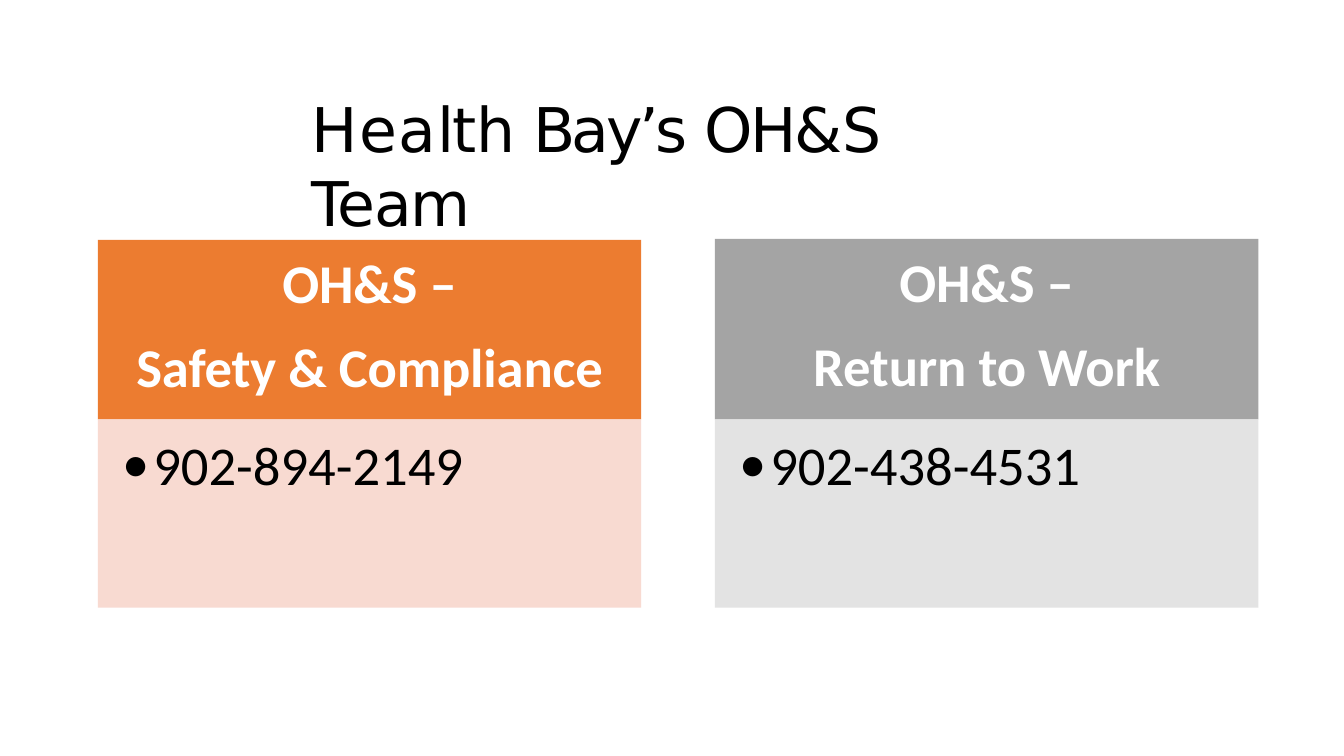
from pptx import Presentation
from pptx.dml.color import RGBColor
from pptx.enum.shapes import MSO_SHAPE as Shape
from pptx.enum.text import MSO_ANCHOR as Anchor, MSO_AUTO_SIZE as AutoSize, PP_ALIGN as Align
from pptx.oxml.ns import qn
from pptx.util import Inches, Pt
from lxml.etree import SubElement

TITLE_SPANS = [("Hea", 1), ("lt", -1.8), ("h ", -1.6), ("Bay’s ", -2.4),
               ("OH&", -1.6), ("S ", -1.4), ("Team", -0.9)]
TEAMS = [
    ("Safety & Compliance", "902-894-2149", "EC7C30", "F8D6CD", 2.38),
    ("Return to Work", "902-438-4531", "A4A4A4", "E0E0E0", 2.37),
]
LEFT, PITCH, WIDTH = 0.97, 6.12, 5.39
SPLIT, BODY_HEIGHT = 4.16, 1.87


def color(value):
    return RGBColor.from_string(value)


def format_span(span, size, font, fill, bold=False, spacing=0):
    span.font.size = Pt(size)
    span.font.name = font
    span.font.bold = bold
    span.font.color.rgb = color(fill)
    if spacing:
        span.font._element.set("spc", str(round(spacing * 100)))


def prepare_frame(frame, top):
    frame.word_wrap = True
    frame.auto_size = AutoSize.NONE
    frame.vertical_anchor = Anchor.TOP
    frame.margin_left = frame.margin_right = frame.margin_bottom = 0
    frame.margin_top = Inches(top)


def add_title(page):
    title = page.shapes.title
    title.left, title.top = Inches(3.08), Inches(0.89)
    title.width, title.height = Inches(7.11), Inches(0.76)
    prepare_frame(title.text_frame, 0.01)
    para = title.text_frame.paragraphs[0]
    para.alignment = Align.LEFT
    para.space_before = Pt(1.1)
    para._p.get_or_add_pPr().set("marL", str(Inches(0.01)))
    for text, spacing in TITLE_SPANS:
        span = para.add_run()
        span.text = text
        format_span(span, 44, "DejaVu Sans", "000000", spacing=spacing)


def add_panel(page, left, top, height, fill, margin, lines, alpha=None):
    box = page.shapes.add_shape(Shape.RECTANGLE, Inches(left), Inches(top),
                                Inches(WIDTH), Inches(height))
    box.shadow.inherit = False
    box.line.fill.background()
    box.fill.solid()
    box.fill.fore_color.rgb = color(fill)
    if alpha:
        rgb = box._element.spPr.find(qn("a:solidFill")).find(qn("a:srgbClr"))
        SubElement(rgb, qn("a:alpha"), val=str(alpha * 1000))
    prepare_frame(box.text_frame, margin)
    box.text_frame.text = "\n".join(lines)
    return box.text_frame.paragraphs


def add_header(page, left, top, fill, name):
    paras = add_panel(page, left, top, SPLIT - top, fill, 0.09, ["OH&S –", name])
    for para, gap in zip(paras, (6.6, 12.8)):
        para.alignment = Align.CENTER
        para.space_before = Pt(gap)
        format_span(para.runs[0], 39, "Calibri", "FFFFFF", bold=True, spacing=-0.1)


def add_phone(page, left, fill, phone):
    para = add_panel(page, left, SPLIT, BODY_HEIGHT, fill, 0.12, [phone], alpha=90)[0]
    para.alignment = Align.LEFT
    para.space_before = Pt(9)
    properties = para._p.get_or_add_pPr()
    properties.set("marL", str(Inches(0.55)))
    properties.set("indent", str(Inches(-0.31)))
    SubElement(properties, qn("a:buFont"), typeface="Calibri")
    SubElement(properties, qn("a:buChar"), char="•")
    format_span(para.runs[0], 39, "Calibri", "000000")


def main():
    deck = Presentation()
    deck.slide_width, deck.slide_height = Inches(13.33), Inches(7.5)
    page = deck.slides.add_slide(deck.slide_layouts[5])
    add_title(page)
    for index, (name, phone, dark, light, top) in enumerate(TEAMS):
        left = LEFT + index * PITCH
        add_header(page, left, top, dark, name)
        add_phone(page, left, light, phone)
    deck.save("out.pptx")


if __name__ == "__main__":
    main()
